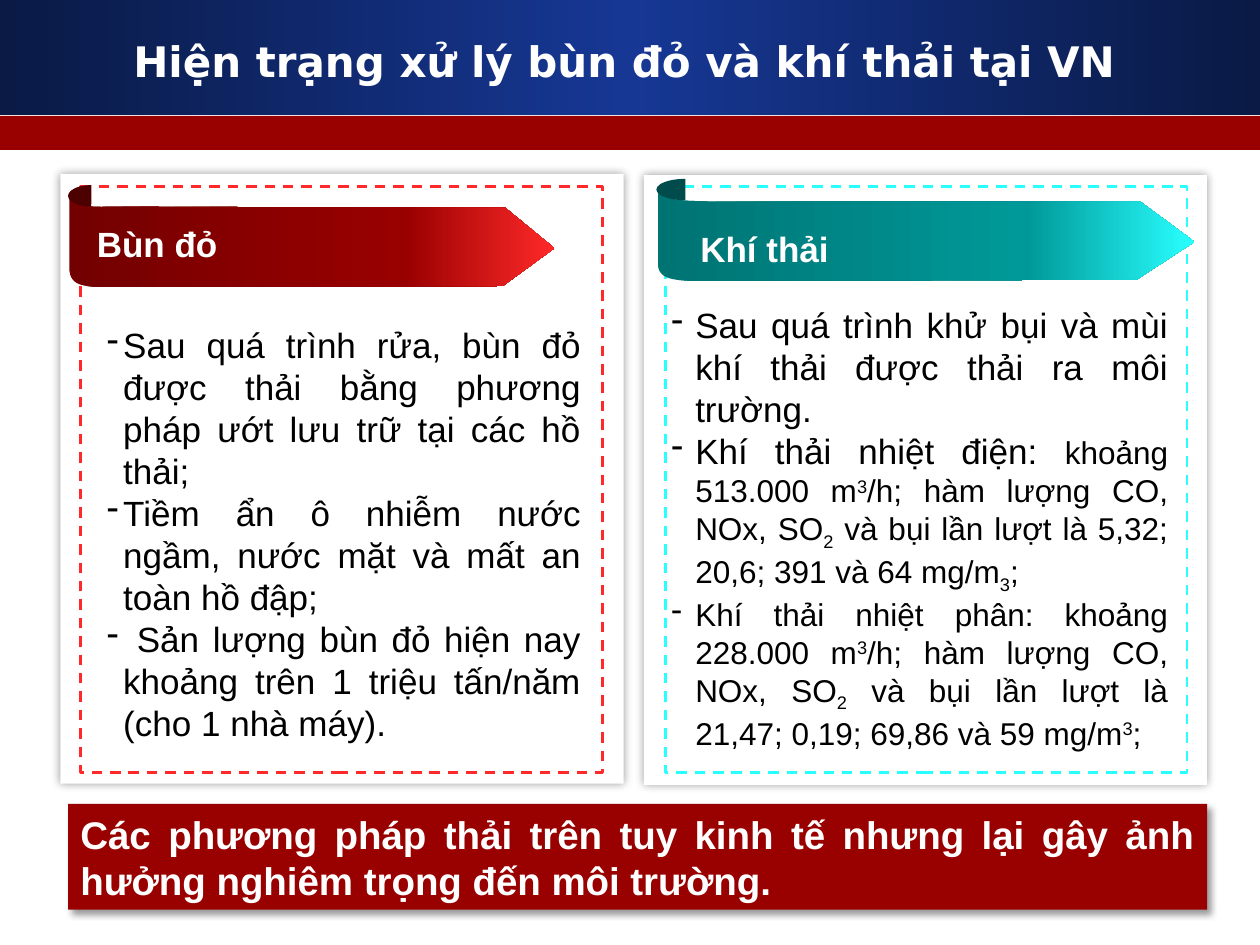
import copy

import lxml.etree
import pptx
import pptx.dml.color
import pptx.enum.dml
import pptx.enum.shapes
import pptx.enum.text
import pptx.oxml.ns
import pptx.util

PX = 9144
rgb = pptx.dml.color.RGBColor.from_string
qn = pptx.oxml.ns.qn
MSO = pptx.enum.shapes.MSO_SHAPE
ALIGN = pptx.enum.text.PP_ALIGN
MIDDLE = pptx.enum.text.MSO_ANCHOR.MIDDLE


def paint(sp, fill=None, line=None, shadow=None):
    if isinstance(fill, list):
        sp.fill.gradient()
        sp.fill.gradient_angle = 0
        gs = sp._element.spPr.find(".//" + qn("a:gsLst"))
        gs.insert(1, copy.deepcopy(gs[0]))
        for stop, (position, color) in zip(sp.fill.gradient_stops, fill):
            stop.color.rgb = rgb(color)
            stop.position = position
    elif fill:
        sp.fill.solid()
        sp.fill.fore_color.rgb = rgb(fill)
    else:
        sp.fill.background()
    if line:
        sp.line.color.rgb = rgb(line)
        sp.line.width = pptx.util.Pt(1.5)
        sp.line.dash_style = pptx.enum.dml.MSO_LINE.DASH
    else:
        sp.line.fill.background()
    sp.shadow.inherit = False
    if shadow:
        blur, dist, angle = shadow
        effects = sp._element.spPr.find(qn("a:effectLst"))
        outer = lxml.etree.SubElement(
            effects, qn("a:outerShdw"), blurRad=str(blur * 12700),
            dist=str(dist * 12700), dir=str(angle * 60000), algn="ctr", rotWithShape="0")
        black = lxml.etree.SubElement(outer, qn("a:srgbClr"), val="000000")
        lxml.etree.SubElement(black, qn("a:alpha"), val="40000")


def write(sp, paragraphs, size, color="FFFFFF", font="Arial", bold=True,
          align=ALIGN.LEFT, indent=0, space=0, wrap=True):
    tf = sp.text_frame
    for name, value in {"word_wrap": wrap, "vertical_anchor": MIDDLE}.items():
        setattr(tf, name, value)
    for i, runs in enumerate(paragraphs):
        p = tf.add_paragraph() if i else tf.paragraphs[0]
        for name, value in {"alignment": align, "space_before": pptx.util.Pt(space),
                            "space_after": pptx.util.Pt(space)}.items():
            setattr(p, name, value)
        if indent:
            pPr = p._p.get_or_add_pPr()
            pPr.set("marL", str(indent * PX))
            pPr.set("indent", str(-indent * PX))
            lxml.etree.SubElement(pPr, qn("a:buFontTx"))
            lxml.etree.SubElement(pPr, qn("a:buChar"), char="-")
        for text, run_size, baseline in runs:
            r = p.add_run()
            r.text = text
            for name, value in {"size": pptx.util.Pt(run_size or size),
                                "name": font, "bold": bold}.items():
                setattr(r.font, name, value)
            r.font.color.rgb = rgb(color)
            if baseline:
                r._r.get_or_add_rPr().set("baseline", str(baseline * 1000))


prs = pptx.Presentation()
prs.slide_width = 1000 * PX
prs.slide_height = 750 * PX
s = prs.slides.add_slide(prs.slide_layouts[6])

bands = [
    ((0, 0, 1000, 91), [(0, "0A1A45"), (0.5, "163794"), (1, "0A1A45")]),
    ((0, 92, 1000, 27), "990000"),
]
for box, fill in bands:
    sp = s.shapes.add_shape(MSO.RECTANGLE, *[v * PX for v in box])
    paint(sp, fill)

sp = s.shapes.add_textbox(*[v * PX for v in (33, 17, 925, 62)])
write(sp, [[("Hiện trạng xử lý bùn đỏ và khí thải tại VN", 24, 0)]], 24,
      font="DejaVu Sans", align=ALIGN.CENTER)

panels = [
    {
        "card": (48, 138, 447, 484), "frame": (64, 148, 414, 465),
        "curl": (54, 147, 37, 17),
        "colors": ("730000", "990000", "FF2929"), "dark": "4C0000",
        "tip": [(79, 228), (399, 227), (440, 197), (401, 165), (91, 164)],
        "top": [(91, 164), (78, 164), (58, 166), (55, 154)],
        "bottom": [(55, 212), (55, 226), (64, 227), (79, 228)],
        "heading": "Bùn đỏ", "label": (67, 171, 117, 44), "wrap": False,
        "body": (75, 250, 396, 347), "indent": 13,
        "text": [
            [("Sau quá trình rửa, bùn đỏ được thải bằng phương pháp ướt "
              "lưu trữ tại các hồ thải;", 20, 0)],
            [("Tiềm ẩn ô nhiễm nước ngầm, nước mặt và mất an toàn hồ đập;", 20, 0)],
            [(" Sản lượng bùn đỏ hiện nay khoảng trên 1 triệu tấn/năm "
              "(cho 1 nhà máy).", 20, 0)],
        ],
    },
    {
        "card": (511, 139, 447, 484), "frame": (528, 148, 414, 465),
        "curl": (521, 142, 46, 17),
        "colors": ("007373", "009999", "29FFFF"), "dark": "004C4C",
        "tip": [(548, 223), (902, 222), (948, 192), (905, 160), (562, 160)],
        "top": [(562, 160), (548, 159), (526, 161), (522, 149)],
        "bottom": [(522, 208), (522, 221), (532, 222), (548, 223)],
        "heading": "Khí thải", "label": (546, 175, 264, 44), "wrap": True,
        "body": (523, 240, 414, 357), "indent": 19,
        "text": [
            [("Sau quá trình khử bụi và mùi khí thải được thải ra môi trường. ", 20, 0)],
            [("Khí thải nhiệt điện: ", 20, 0), ("khoảng 513.000 m", 18, 0), ("3", 18, 30),
             ("/h; hàm lượng CO, NOx, SO", 18, 0), ("2", 18, -25),
             (" và bụi lần lượt là 5,32; 20,6; 391 và 64 mg/m", 18, 0),
             ("3", 18, -25), (";", 18, 0)],
            [("Khí thải nhiệt phân: khoảng 228.000 m", 18, 0), ("3", 18, 30),
             ("/h; hàm lượng CO, NOx, SO", 18, 0), ("2", 18, -25),
             (" và bụi lần lượt là 21,47; 0,19; 69,86 và 59 mg/m", 18, 0),
             ("3", 18, 30), ("; ", 18, 0)],
        ],
    },
]
for panel in panels:
    sp = s.shapes.add_shape(MSO.RECTANGLE, *[v * PX for v in panel["card"]])
    paint(sp, "FFFFFF", shadow=(5, 0, 0))
    sp = s.shapes.add_shape(MSO.RECTANGLE, *[v * PX for v in panel["frame"]])
    paint(sp, line=panel["colors"][2])

    points = list(panel["tip"])
    for curve in (panel["top"], panel["bottom"]):
        for step in range(13):
            t = step / 12
            weights = ((1 - t) ** 3, 3 * t * (1 - t) ** 2, 3 * t * t * (1 - t), t ** 3)
            points.append([sum(w * v for w, v in zip(weights, axis))
                           for axis in zip(*curve)])
    points = [(round(x * PX), round(y * PX)) for x, y in points]
    builder = s.shapes.build_freeform(*points[0])
    builder.add_line_segments(points[1:], close=True)
    sp = builder.convert_to_shape()
    paint(sp, list(zip((0, 0.69, 1), panel["colors"])))

    sp = s.shapes.add_shape(MSO.PIE, *[v * PX for v in panel["curl"]])
    sp.adjustments[0] = 54.3
    sp.adjustments[1] = 162
    paint(sp, panel["dark"])

    sp = s.shapes.add_textbox(*[v * PX for v in panel["body"]])
    write(sp, panel["text"], 20, "000000", bold=False,
          align=ALIGN.JUSTIFY, indent=panel["indent"])
    sp = s.shapes.add_textbox(*[v * PX for v in panel["label"]])
    write(sp, [[(panel["heading"], 20, 0)]], 20, wrap=panel["wrap"])

sp = s.shapes.add_shape(MSO.RECTANGLE, *[v * PX for v in (54, 638, 904, 84)])
paint(sp, "990000", shadow=(4, 3, 45))
write(sp, [[("Các phương pháp thải trên tuy kinh tế nhưng lại gây ảnh hưởng "
             "nghiêm trọng đến môi trường.", 22, 0)]], 22, align=ALIGN.JUSTIFY, space=6)

prs.save("out.pptx")
